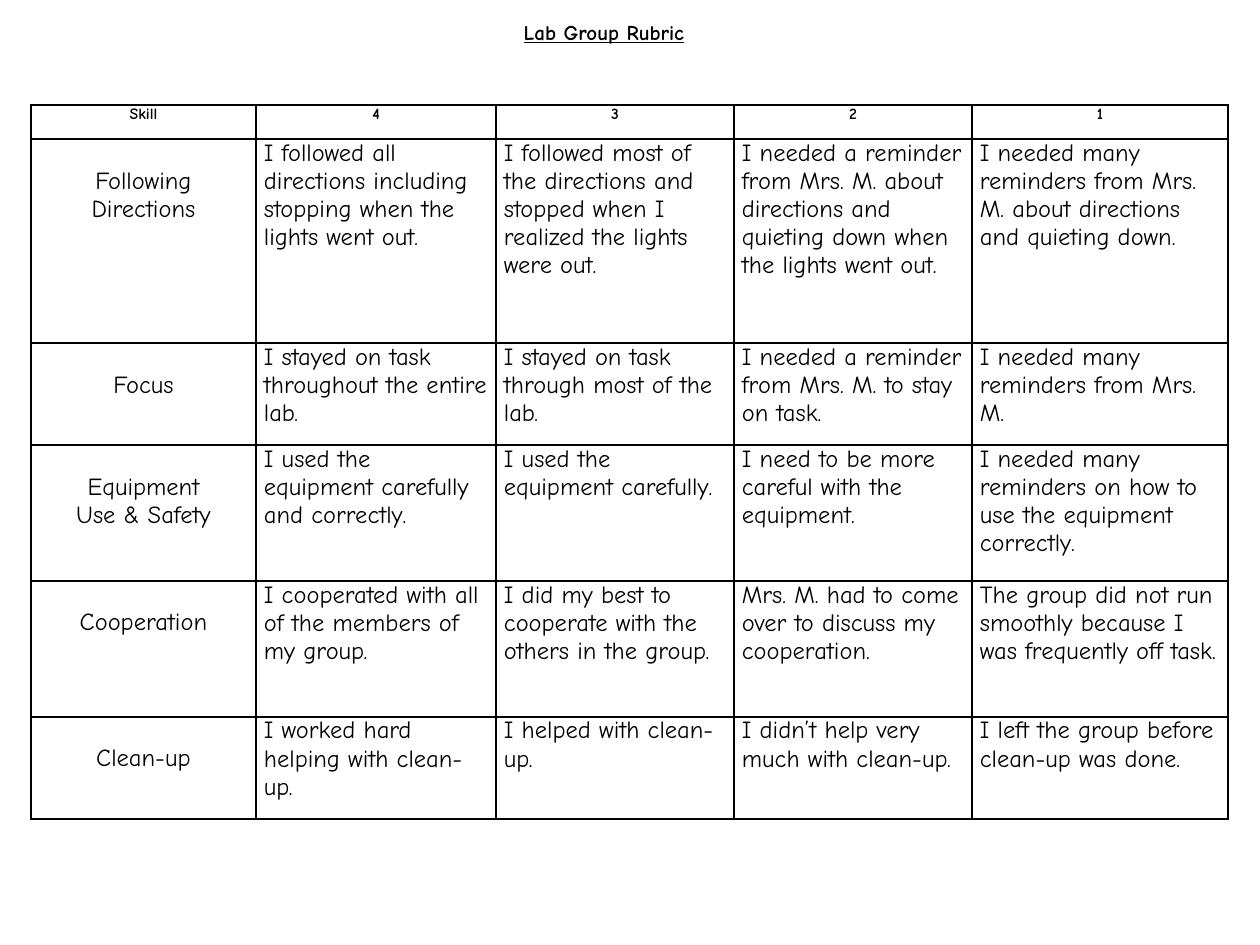
from lxml.etree import SubElement
from pptx import Presentation
from pptx.dml.color import RGBColor
from pptx.enum.text import MSO_ANCHOR, PP_ALIGN
from pptx.oxml.ns import qn
from pptx.util import Emu, Pt

FONT = "Comic Neue"
INK = "000000"
PAD = 8
SKILL_DROP = 28
COLUMN_WIDTHS = [225, 240, 238, 238, 256]
ROW_HEIGHTS = [34, 204, 102, 136, 136, 102]
HEADINGS = ["Skill", "4", "3", "2", "1"]
SKILLS = [
    ["Following\nDirections",
     "I followed all directions including stopping when the lights went out.",
     "I followed most of the directions and stopped when I realized the lights were out.",
     "I needed a reminder from Mrs. M. about directions and quieting down when the lights went out.",
     "I needed many reminders from Mrs. M. about directions and quieting down."],
    ["Focus",
     "I stayed on task throughout the entire lab.",
     "I stayed on task through most of the lab.",
     "I needed a reminder from Mrs. M. to stay on task.",
     "I needed many reminders from Mrs. M."],
    ["Equipment\nUse & Safety",
     "I used the equipment carefully and correctly.",
     "I used the equipment carefully.",
     "I need to be more careful with the equipment.",
     "I needed many reminders on how to use the equipment correctly."],
    ["Cooperation",
     "I cooperated with all of the members of my group.",
     "I did my best to cooperate with the others in the group.",
     "Mrs. M. had to come over to discuss my cooperation.",
     "The group did not run smoothly because I was frequently off task."],
    ["Clean-up",
     "I worked hard helping with clean-up.",
     "I helped with clean-up.",
     "I didn’t help very much with clean-up.",
     "I left the group before clean-up was done."],
]


def px(length):
    return Emu(round(length * 914400 / 126))


def color(value):
    return RGBColor.from_string(value)


def style_text(frame, size, bold, alignment, underline=False):
    for para in frame.paragraphs:
        para.alignment = alignment
        for span in para.runs:
            span.font.name = FONT
            span.font.size = Pt(size)
            span.font.bold = bold
            span.font.underline = underline
            span.font.color.rgb = color(INK)


def add_borders(cell):
    properties = cell._tc.get_or_add_tcPr()
    for side in ("a:lnL", "a:lnR", "a:lnT", "a:lnB"):
        line = SubElement(properties, qn(side), w=str(Pt(1)))
        fill = SubElement(line, qn("a:solidFill"))
        SubElement(fill, qn("a:srgbClr"), val=INK)


def place_title(page, left, top, width, height):
    title = page.shapes.title
    title.left, title.top = px(left), px(top)
    title.width, title.height = px(width), px(height)
    frame = title.text_frame
    frame.text = "Lab Group Rubric"
    frame.vertical_anchor = MSO_ANCHOR.TOP
    style_text(frame, 12, True, PP_ALIGN.CENTER, underline=True)


def fill_cell(cell, text, is_heading, is_skill):
    cell.margin_left = cell.margin_right = px(PAD)
    cell.margin_top = px(SKILL_DROP if is_skill and not is_heading else 0)
    cell.margin_bottom = 0
    add_borders(cell)
    cell.fill.background()
    cell.text_frame.text = text
    alignment = PP_ALIGN.CENTER if is_heading or is_skill else PP_ALIGN.LEFT
    style_text(cell.text_frame, 9 if is_heading else 14, is_heading, alignment)


def place_rubric(page, left, top):
    rows = [HEADINGS] + SKILLS
    table = page.shapes.add_table(
        len(rows), len(HEADINGS), px(left), px(top),
        px(sum(COLUMN_WIDTHS)), px(sum(ROW_HEIGHTS))).table
    table.horz_banding = False
    table.first_row = False
    for column, width in zip(table.columns, COLUMN_WIDTHS):
        column.width = px(width)
    for row, height in zip(table.rows, ROW_HEIGHTS):
        row.height = px(height)
    for row_index, texts in enumerate(rows):
        for column_index, text in enumerate(texts):
            fill_cell(table.cell(row_index, column_index), text,
                      row_index == 0, column_index == 0)


def main():
    deck = Presentation()
    deck.slide_width, deck.slide_height = px(1260), px(945)
    page = deck.slides.add_slide(deck.slide_layouts[5])
    place_title(page, 420, 13, 368, 77)
    place_rubric(page, 31, 105)
    deck.save("out.pptx")


if __name__ == "__main__":
    main()
